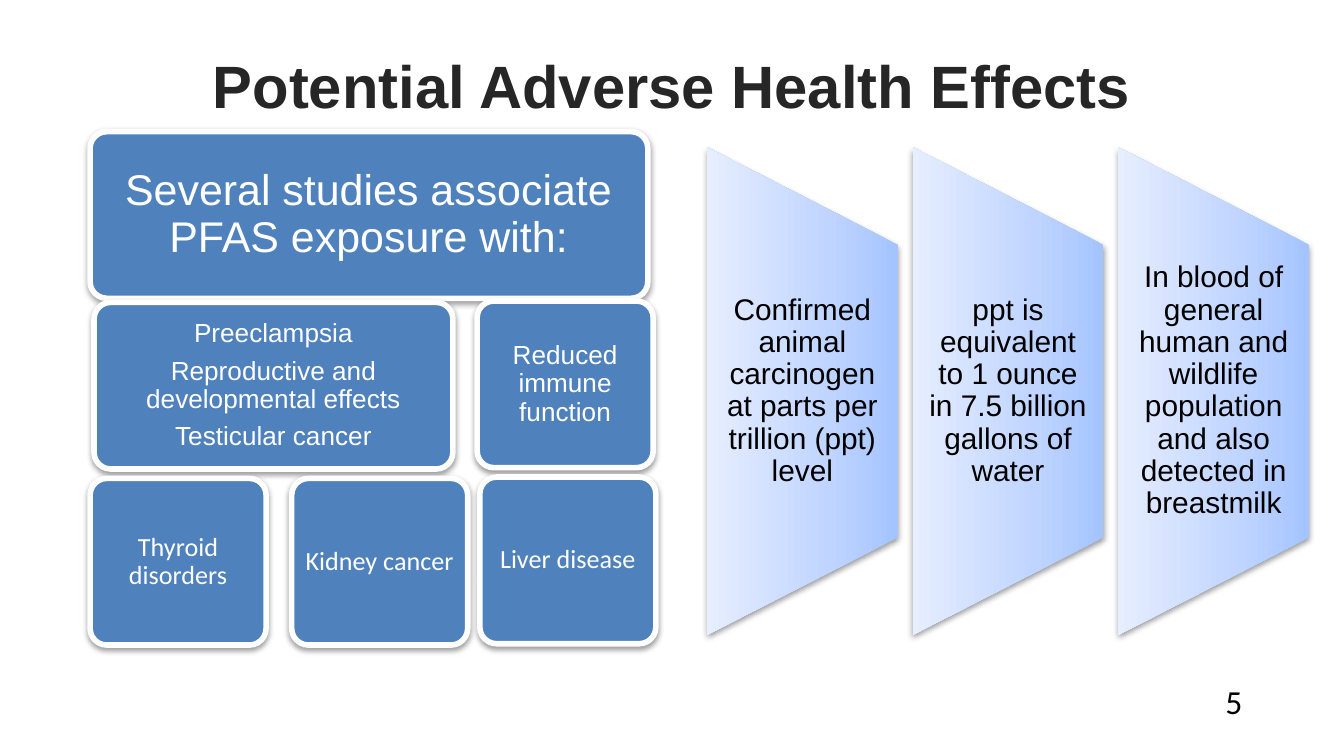
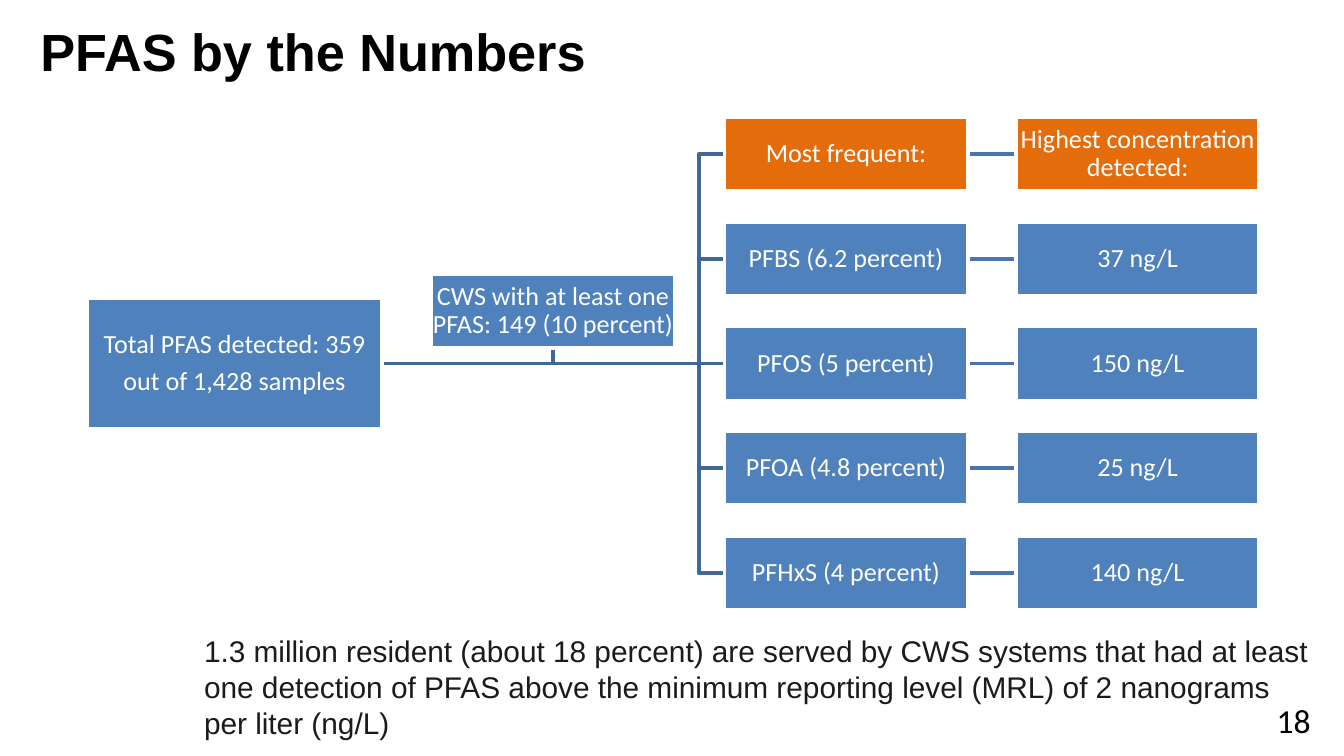
from dataclasses import dataclass

from lxml.etree import SubElement
from pptx import Presentation
from pptx.dml.color import RGBColor
from pptx.enum.shapes import MSO_CONNECTOR, MSO_SHAPE
from pptx.enum.text import MSO_ANCHOR, MSO_AUTO_SIZE, PP_ALIGN
from pptx.oxml import parse_xml
from pptx.oxml.ns import nsdecls, qn
from pptx.util import Inches, Pt

UNIT = 0.1
TITLE_ONLY = 5


@dataclass(frozen=True)
class Theme:
    blue: str = "4F81BD"
    orange: str = "E46C0A"
    branch: str = "3F6797"
    link: str = "4875AC"
    white: str = "FFFFFF"
    black: str = "000000"
    charcoal: str = "262626"
    ink: str = "1B1B1B"
    panel_stops: tuple = ((0, "A4C4FF"), (35, "BFD4FF"), (100, "E6EEFF"))
    heading: str = "Arial"
    body: str = "Calibri"
    title_large: int = 32
    title_small: int = 28
    lead: int = 23
    number: int = 18
    text: int = 16
    label: int = 14


THEME = Theme()


@dataclass(frozen=True)
class Box:
    left: float
    top: float
    width: float
    height: float

    def cell(self, column, row, columns, rows):
        return Box(self.left + column, self.top + row, columns, rows)

    @property
    def center(self):
        return self.left + self.width / 2, self.top + self.height / 2

    @property
    def frame(self):
        return [grid(v) for v in (self.left, self.top, self.width, self.height)]


def grid(units):
    return Inches(units * UNIT)


def color(value):
    return RGBColor.from_string(value)


def write(frame, lines, size, font, ink, bold=False, align=PP_ALIGN.LEFT,
          anchor=MSO_ANCHOR.TOP, insets=(0.1, 0.05), tight=False):
    frame.word_wrap = True
    frame.auto_size = MSO_AUTO_SIZE.NONE
    frame.vertical_anchor = anchor
    frame.margin_left = frame.margin_right = Inches(insets[0])
    frame.margin_top = frame.margin_bottom = Inches(insets[1])
    for index, line in enumerate(lines):
        para = frame.add_paragraph() if index else frame.paragraphs[0]
        para.alignment = align
        if tight:
            para.line_spacing = 0.9
            para.space_after = Pt(round(size * 0.35))
        span = para.add_run()
        span.text = line
        span.font.size = Pt(size)
        span.font.name = font
        span.font.bold = bold
        span.font.color.rgb = color(ink)


def write_centered(frame, lines, size, font, ink, insets):
    write(frame, lines, size, font, ink, align=PP_ALIGN.CENTER,
          anchor=MSO_ANCHOR.MIDDLE, insets=insets, tight=True)


def add_title(page, box, text, size, ink, align):
    title = page.shapes.title
    title.left, title.top, title.width, title.height = box.frame
    write(title.text_frame, [text], size, THEME.heading, ink, bold=True,
          align=align, anchor=MSO_ANCHOR.MIDDLE)


def add_text(page, box, text, size, font, ink):
    area = page.shapes.add_textbox(*box.frame)
    write(area.text_frame, [text], size, font, ink)


def add_number(page, box, text):
    add_text(page, box, text, THEME.number, THEME.body, THEME.black)


def add_block(page, kind, box, fill, border):
    block = page.shapes.add_shape(kind, *box.frame)
    block.shadow.inherit = False
    block.fill.solid()
    block.fill.fore_color.rgb = color(fill)
    block.line.color.rgb = color(THEME.white)
    block.line.width = Pt(border)
    return block


def drop_shadow(shape):
    shape.shadow.inherit = False
    effects = shape.element.spPr.find(qn("a:effectLst"))
    outer = SubElement(effects, qn("a:outerShdw"), blurRad="40000",
                       dist="20000", dir="5400000", rotWithShape="0")
    shade = SubElement(outer, qn("a:srgbClr"), val=THEME.black)
    SubElement(shade, qn("a:alpha"), val="38000")


def fill_gradient(shape, stops):
    shape.fill.gradient()
    gradient = shape.element.spPr.find(qn("a:gradFill"))
    marks = "".join(f'<a:gs pos="{share * 1000}"><a:srgbClr val="{tone}"/></a:gs>'
                    for share, tone in stops)
    gradient.replace(gradient.find(qn("a:gsLst")),
                     parse_xml(f'<a:gsLst {nsdecls("a")}>{marks}</a:gsLst>'))
    gradient.find(qn("a:lin")).set("ang", "16200000")


def send_to_back(shape):
    shape.element.getparent().insert(2, shape.element)


def style_line(line, tone):
    line.line.color.rgb = color(tone)
    line.line.width = Pt(2)
    send_to_back(line)


def add_link(page, start, end, tone):
    link = page.shapes.add_connector(MSO_CONNECTOR.STRAIGHT, 0, 0, 0, 0)
    link.begin_connect(start, 3)
    link.end_connect(end, 1)
    SubElement(link.element.spPr, qn("a:effectLst"))
    style_line(link, tone)


def add_bent_line(page, points, tone):
    corners = [(grid(x), grid(y)) for x, y in points]
    builder = page.shapes.build_freeform(*corners[0])
    builder.add_line_segments(corners[1:], close=False)
    line = builder.convert_to_shape()
    line.shadow.inherit = False
    line.fill.background()
    style_line(line, tone)


def add_effect_cards(page, box):
    tall, narrow = 12.4, 13.1
    lead = ["Several studies associate PFAS exposure with:"]
    reproductive = ["Preeclampsia", "Reproductive and developmental effects",
                    "Testicular cancer"]
    cards = [
        (0, 0, 41.5, lead, THEME.lead, THEME.heading),
        (0.3, 12.7, 26.7, reproductive, THEME.label, THEME.heading),
        (0, 25.8, narrow, ["Thyroid disorders"], THEME.label, THEME.body),
        (15, 25.8, narrow, ["Kidney cancer"], THEME.label, THEME.body),
        (28.8, 12.6, narrow, ["Reduced immune function"], THEME.label, THEME.heading),
        (29, 25.7, narrow, ["Liver disease"], THEME.label, THEME.body),
    ]
    for column, row, columns, lines, size, font in cards:
        card = add_block(page, MSO_SHAPE.ROUNDED_RECTANGLE,
                         box.cell(column, row, columns, tall), THEME.blue, 3)
        card.adjustments[0] = 0.1
        drop_shadow(card)
        write_centered(card.text_frame, lines, size, font, THEME.white, (0.06, 0.06))


def add_fact_panels(page, box):
    facts = ["Confirmed animal carcinogen at parts per trillion (ppt) level",
             "ppt is equivalent to 1 ounce in 7.5 billion gallons of water",
             "In blood of general human and wildlife population and also "
             "detected in breastmilk"]
    columns = 14.2
    step = (box.width - columns) / (len(facts) - 1)
    for index, fact in enumerate(facts):
        slot = box.cell(index * step, 0, columns, box.height)
        middle, center = slot.center
        turned = Box(middle - slot.height / 2, center - slot.width / 2,
                     slot.height, slot.width)
        panel = page.shapes.add_shape(MSO_SHAPE.FLOWCHART_MANUAL_OPERATION,
                                      *turned.frame)
        panel.rotation = 270
        panel.line.fill.background()
        fill_gradient(panel, THEME.panel_stops)
        drop_shadow(panel)
        words = slot.cell(0, box.height * 0.2, columns, box.height * 0.6)
        area = page.shapes.add_textbox(*words.frame)
        write_centered(area.text_frame, [fact], THEME.text, THEME.heading,
                       THEME.black, (0.11, 0))


def add_detection_tree(page, box):
    columns, rows, step, spine = 18.1, 5.5, 7.8, box.left + 45.5
    findings = [("Most frequent:", "Highest concentration detected:"),
                ("PFBS (6.2 percent)", "37 ng/L"),
                ("PFOS (5 percent)", "150 ng/L"),
                ("PFOA (4.8 percent)", "25 ng/L"),
                ("PFHxS (4 percent)", "140 ng/L")]

    def add_node(place, lines, fill=THEME.blue):
        node = add_block(page, MSO_SHAPE.RECTANGLE, place, fill, 2)
        write_centered(node.text_frame, lines, THEME.label, THEME.body,
                       THEME.white, (0.01, 0.01))
        return node

    total_box = box.cell(0, 13.45, 21.9, 9.8)
    total = add_node(total_box, ["Total PFAS detected: 359", "out of 1,428 samples"])
    start = total_box.left + total_box.width, total_box.center[1]

    for index, (compound, level) in enumerate(findings):
        fill = THEME.blue if index else THEME.orange
        place = box.cell(47.4, index * step, columns, rows)
        compound_node = add_node(place, [compound], fill)
        level_node = add_node(box.cell(69.1, index * step, columns, rows), [level], fill)
        add_link(page, compound_node, level_node, THEME.link)
        if index == len(findings) // 2:
            add_link(page, total, compound_node, THEME.branch)
        else:
            height = place.center[1]
            add_bent_line(page, [start, (spine, start[1]), (spine, height),
                                 (place.left, height)], THEME.branch)

    system_box = box.cell(25.6, 11.7, columns, rows)
    add_node(system_box, ["CWS with at least one PFAS: 149 (10 percent)"])
    middle = system_box.center[0]
    add_bent_line(page, [start, (middle, start[1]),
                         (middle, system_box.top + rows)], THEME.branch)


def build_effects_page(page):
    add_title(page, Box(0, 2.8, 100, 7), "Potential Adverse Health Effects",
              THEME.title_large, THEME.charcoal, PP_ALIGN.CENTER)
    add_effect_cards(page, Box(6.7, 9.8, 42.1, 38.2))
    add_fact_panels(page, Box(52.6, 10.95, 44.8, 36.3))
    add_number(page, Box(90.2, 50.2, 7.6, 4), "5")


def build_numbers_page(page):
    add_title(page, Box(2, 0.9, 84.6, 5.7), "PFAS by the Numbers",
              THEME.title_small, THEME.black, PP_ALIGN.LEFT)
    add_text(page, Box(14.2, 46.6, 84.6, 9.6),
             "1.3 million resident (about 18 percent) are served by CWS systems that "
             "had at least one detection of PFAS above the minimum reporting level "
             "(MRL) of 2 nanograms per liter (ng/L)",
             THEME.text, THEME.heading, THEME.ink)
    add_detection_tree(page, Box(6.5, 8.7, 87.2, 36.7))
    add_number(page, Box(94, 51.6, 6, 4), "18")


def main():
    deck = Presentation()
    deck.slide_width, deck.slide_height = grid(100), grid(56.25)
    for build in (build_effects_page, build_numbers_page):
        build(deck.slides.add_slide(deck.slide_layouts[TITLE_ONLY]))
    deck.save("out.pptx")


if __name__ == "__main__":
    main()
